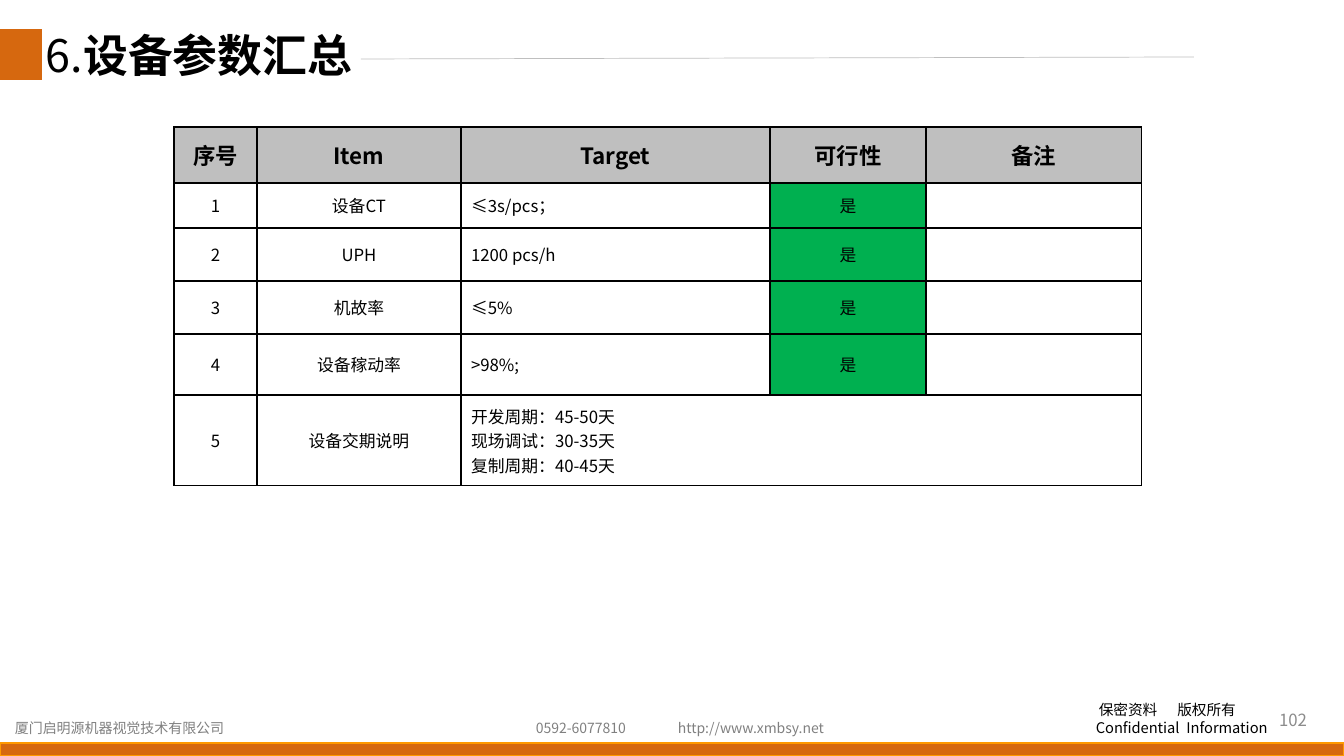
from pptx import Presentation
from pptx.dml.color import RGBColor
from pptx.enum.shapes import MSO_CONNECTOR, MSO_SHAPE
from pptx.enum.text import MSO_ANCHOR, PP_ALIGN
from pptx.oxml.ns import qn
from pptx.util import Pt
from lxml.etree import SubElement

EMU_PER_PX = 9071.43
FONT = "Noto Sans CJK SC"
COLORS = {
    "orange": "D6680F",
    "amber": "FF9900",
    "black": "000000",
    "gray": "808080",
    "number": "8C8C8C",
    "rule": "BFBFBF",
    "header": "BFBFBF",
    "green": "00B050",
}
COLUMN_WIDTHS = [83, 204, 309, 156, 216]
ROW_HEIGHTS = [56, 45, 53, 53, 61, 91]
HEADINGS = ["序号", "Item", "Target", "可行性", "备注"]
PARAMETERS = [
    ("设备CT", ["≤3s/pcs；"], "是"),
    ("UPH", ["1200 pcs/h"], "是"),
    ("机故率", ["≤5%"], "是"),
    ("设备稼动率", [">98%;"], "是"),
    ("设备交期说明", ["开发周期：45-50天", "现场调试：30-35天", "复制周期：40-45天"], ""),
]


def px(length):
    return round(length * EMU_PER_PX)


def color(name):
    return RGBColor.from_string(COLORS[name])


def add_span(para, text, size, tone="black", bold=False):
    span = para.add_run()
    span.text = text
    span.font.size = Pt(size)
    span.font.bold = bold
    span.font.name = FONT
    span.font.color.rgb = color(tone)
    SubElement(span.font._element, qn("a:ea"), typeface=FONT)
    return span


def add_box(page, left, top, width, height):
    box = page.shapes.add_textbox(px(left), px(top), px(width), px(height))
    box.text_frame.word_wrap = True
    return box.text_frame


def add_label(page, left, top, width, text):
    frame = add_box(page, left, top, width, 27)
    add_span(frame.paragraphs[0], text, 10, "gray")


def add_bar(page, left, top, width, height, line=None):
    bar = page.shapes.add_shape(
        MSO_SHAPE.RECTANGLE, px(left), px(top), px(width), px(height)
    )
    bar.shadow.inherit = False
    bar.fill.solid()
    bar.fill.fore_color.rgb = color("orange")
    if line:
        bar.line.color.rgb = color(line)
        bar.line.width = Pt(1)
    else:
        bar.line.fill.background()


def add_rule(page, left, top, right, bottom):
    rule = page.shapes.add_connector(
        MSO_CONNECTOR.STRAIGHT, px(left), px(top), px(right), px(bottom)
    )
    rule.line.color.rgb = color("rule")
    rule.line.width = Pt(0.5)
    SubElement(rule._element.spPr, qn("a:effectLst"))


def add_spaced_pair(para, first, second, spacing, indent=0):
    properties = para._p.get_or_add_pPr()
    properties.set("marL", str(px(indent)))
    properties.set("indent", "0")
    add_span(para, first, 10.5)
    gap = add_span(para, " ", 10.5)
    gap.font._element.set("spc", str(spacing))
    add_span(para, second, 10.5)


def add_notice(page):
    frame = add_box(page, 1086, 696, 219, 45)
    add_spaced_pair(frame.paragraphs[0], "保密资料", "版权所有", 1200, 3)
    add_spaced_pair(frame.add_paragraph(), "Confidential", "Information", 250)


def border_cell(cell):
    properties = cell._tc.get_or_add_tcPr()
    for side in ("lnL", "lnR", "lnT", "lnB"):
        line = SubElement(properties, qn(f"a:{side}"), w=str(Pt(1)))
        fill = SubElement(line, qn("a:solidFill"))
        SubElement(fill, qn("a:srgbClr"), val=COLORS["black"])


def fill_cell(cell, lines, size=12, bold=False, align=PP_ALIGN.CENTER, tone=None):
    border_cell(cell)
    cell.vertical_anchor = MSO_ANCHOR.MIDDLE
    cell.margin_top = cell.margin_bottom = 0
    if tone:
        cell.fill.solid()
        cell.fill.fore_color.rgb = color(tone)
    else:
        cell.fill.background()
    for index, text in enumerate(lines):
        para = cell.text_frame.add_paragraph() if index else cell.text_frame.paragraphs[0]
        para.alignment = align
        add_span(para, text, size, bold=bold)


def add_parameter_table(page):
    frame = page.shapes.add_table(
        len(ROW_HEIGHTS), len(COLUMN_WIDTHS), px(174), px(127),
        px(sum(COLUMN_WIDTHS)), px(sum(ROW_HEIGHTS)),
    )
    table = frame.table
    table.first_row = table.horz_banding = False
    for column, width in zip(table.columns, COLUMN_WIDTHS):
        column.width = px(width)
    for row, height in zip(table.rows, ROW_HEIGHTS):
        row.height = px(height)
    for column, heading in enumerate(HEADINGS):
        fill_cell(table.cell(0, column), [heading], 16, True, tone="header")
    for row, (item, target, feasible) in enumerate(PARAMETERS, 1):
        fill_cell(table.cell(row, 0), [str(row)])
        fill_cell(table.cell(row, 1), [item])
        fill_cell(table.cell(row, 2), target, align=PP_ALIGN.LEFT)
        fill_cell(table.cell(row, 3), [feasible], tone="green" if feasible else None)
        fill_cell(table.cell(row, 4), [""])
    last = len(PARAMETERS)
    table.cell(last, 2).merge(table.cell(last, 4))


def add_title(page):
    para = add_box(page, 36, 29, 384, 72).paragraphs[0]
    para.line_spacing = 0.9
    add_span(para, "6.", 32)
    add_span(para, "设备参数汇总", 32, bold=True)


def add_page_number(page):
    frame = add_box(page, 1015, 700, 302, 40)
    frame.vertical_anchor = MSO_ANCHOR.MIDDLE
    para = frame.paragraphs[0]
    para.alignment = PP_ALIGN.RIGHT
    add_span(para, "102", 12, "number")


def main():
    deck = Presentation()
    deck.slide_width, deck.slide_height = px(1344), px(756)
    page = deck.slides.add_slide(deck.slide_layouts[6])
    add_bar(page, 0, 29, 42, 51)
    add_bar(page, 0, 743, 1344, 13, "amber")
    add_notice(page)
    add_label(page, 668, 715, 168, "http://www.xmbsy.net")
    add_label(page, 526, 715, 111, "0592-6077810")
    add_label(page, 5, 715, 237, "厦门启明源机器视觉技术有限公司")
    add_rule(page, 361, 59, 1194, 57)
    add_title(page)
    add_parameter_table(page)
    add_page_number(page)
    deck.save("out.pptx")


if __name__ == "__main__":
    main()
